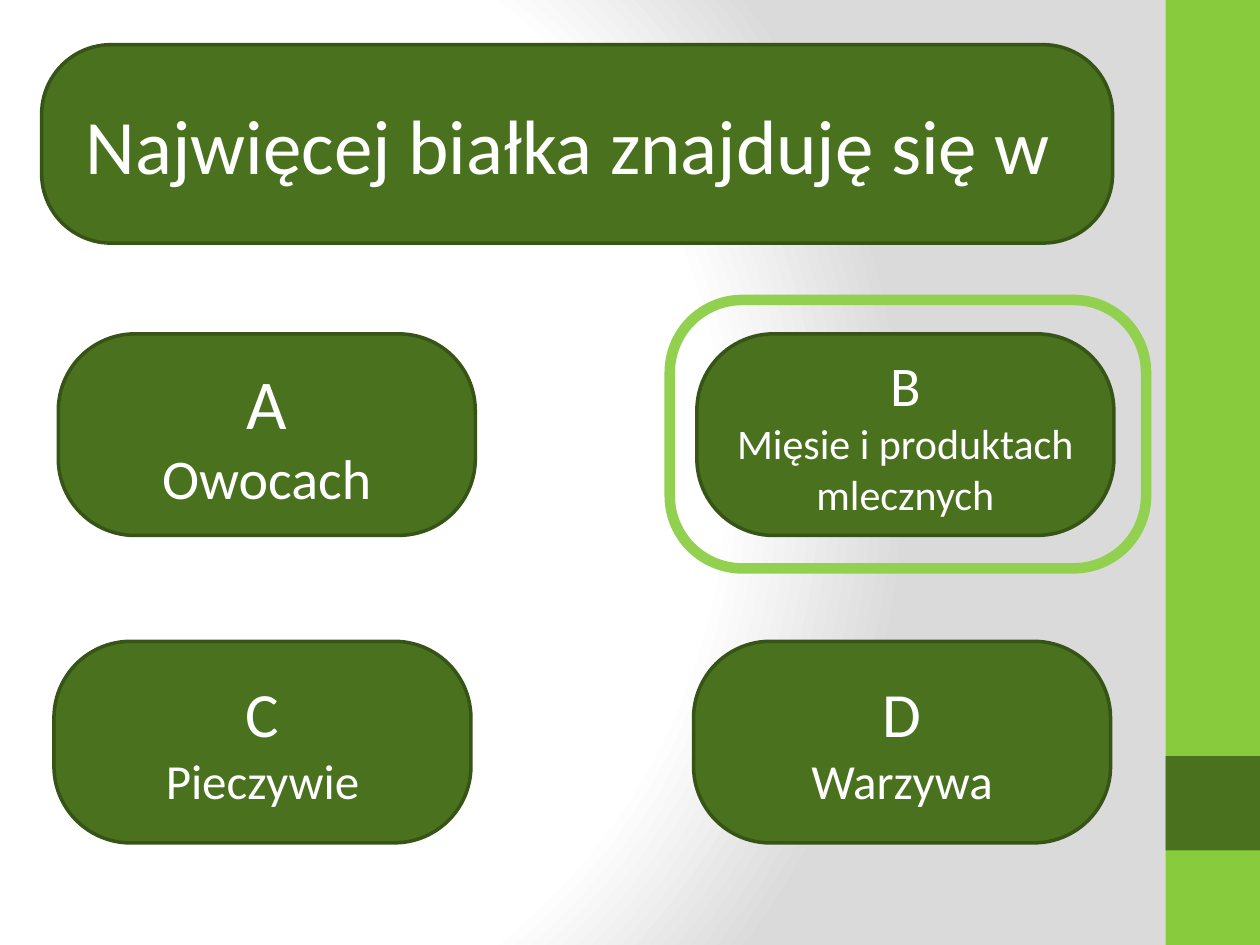
from pptx import Presentation
from pptx.dml.color import RGBColor
from pptx.enum.shapes import MSO_SHAPE
from pptx.enum.text import MSO_ANCHOR, PP_ALIGN
from pptx.oxml import parse_xml
from pptx.oxml.ns import nsdecls, qn
from pptx.util import Pt

LIME, DARK_GREEN, OUTLINE = "88CC3E", "49711E", "365416"
HIGHLIGHT, WHITE, GREY = "92D050", "FFFFFF", "DADADA"
CARD_SIZE = (238.3, 115.2)
TOP_ROW, BOTTOM_ROW = 190.8, 366.5


def color(hex_value):
    return RGBColor.from_string(hex_value)


def set_background(page):
    """Fill the page with a round gradient centred near the left edge."""
    page.background.fill.gradient()
    stops = "".join(
        f'<a:gs pos="{percent * 1000}"><a:srgbClr val="{shade}"/></a:gs>'
        for percent, shade in ((0, WHITE), (75, WHITE), (100, GREY))
    )
    gradient = parse_xml(
        f'<a:gradFill {nsdecls("a")} rotWithShape="1"><a:gsLst>{stops}</a:gsLst>'
        '<a:path path="circle"><a:fillToRect l="20000" t="50000" r="100000" b="50000"/>'
        "</a:path></a:gradFill>"
    )
    default = next(page.element.iter(qn("a:gradFill")))
    default.getparent().replace(default, gradient)


def add_box(page, kind, bounds, fill=None, line=None, line_width=2):
    box = page.shapes.add_shape(kind, *(Pt(length) for length in bounds))
    box.shadow.inherit = False
    if fill:
        box.fill.solid()
        box.fill.fore_color.rgb = color(fill)
    else:
        box.fill.background()
    if line:
        box.line.color.rgb = color(line)
        box.line.width = Pt(line_width)
    else:
        box.line.fill.background()
    return box


def add_card(page, bounds, rounding, lines):
    """Add a rounded green card; lines holds (text, font size) pairs."""
    card = add_box(page, MSO_SHAPE.ROUNDED_RECTANGLE, bounds, DARK_GREEN, OUTLINE)
    card.adjustments[0] = rounding
    frame = card.text_frame
    frame.word_wrap = True
    frame.vertical_anchor = MSO_ANCHOR.MIDDLE
    for index, (text, size) in enumerate(lines):
        para = frame.add_paragraph() if index else frame.paragraphs[0]
        para.text = text
        para.alignment = PP_ALIGN.CENTER
        para.font.name = "Calibri"
        para.font.size = Pt(size)
        para.font.color.rgb = color(WHITE)


def main():
    deck = Presentation()
    deck.slide_width, deck.slide_height = Pt(720), Pt(540)
    page = deck.slides.add_slide(deck.slide_layouts[6])
    set_background(page)

    add_box(page, MSO_SHAPE.RECTANGLE, (666, 0, 54, 540), LIME)
    add_box(page, MSO_SHAPE.RECTANGLE, (666, 432, 54, 54), DARK_GREEN)

    question = "Najwięcej białka znajduję się w "
    add_card(page, (23.8, 25.5, 612, 113.4), 0.35, [(question, 44)])

    answers = [
        ("A", "Owocach", 33.3, TOP_ROW, 40, 32),
        ("D", "Warzywa", 396.3, BOTTOM_ROW, 36, 28),
        ("C", "Pieczywie", 30.8, BOTTOM_ROW, 36, 28),
        ("B", "Mięsie i produktach mlecznych", 398.2, TOP_ROW, 32, 24),
    ]
    for letter, answer, left, top, letter_size, answer_size in answers:
        lines = [(letter, letter_size), (answer, answer_size)]
        add_card(page, (left, top, *CARD_SIZE), 0.38, lines)

    ring = add_box(page, MSO_SHAPE.ROUNDED_RECTANGLE, (382.7, 171.4, 272.2, 153.4),
                   line=HIGHLIGHT, line_width=6)
    ring.adjustments[0] = 0.27

    deck.save("out.pptx")


if __name__ == "__main__":
    main()
